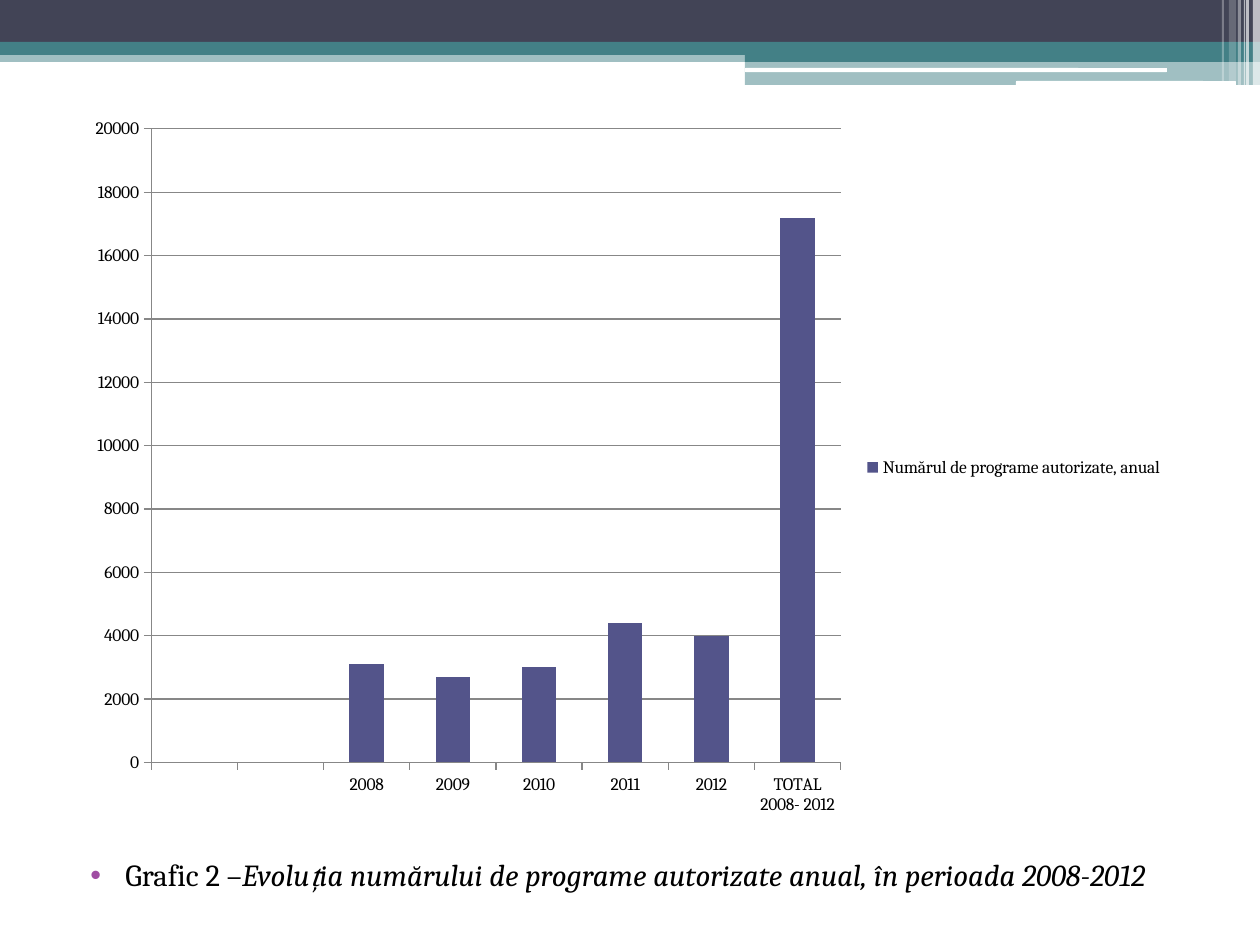
"""Build a slide with a banded header, a column chart and its caption."""
from dataclasses import dataclass

from lxml.etree import SubElement as Sub
from pptx import Presentation
from pptx.chart.data import CategoryChartData as Data
from pptx.dml.color import RGBColor as Rgb
from pptx.enum.chart import XL_CHART_TYPE as Kind
from pptx.enum.chart import XL_LEGEND_POSITION as Side
from pptx.enum.chart import XL_TICK_MARK as Tick
from pptx.enum.shapes import MSO_SHAPE as Form
from pptx.oxml import parse_xml as to_xml
from pptx.oxml.ns import nsdecls, qn
from pptx.util import Pt

SCALE = 914400 // 126


@dataclass(frozen=True)
class Theme:
    """Colours, font and type sizes of the slide."""
    white: str = "FFFFFF"
    dark: str = "424456"
    teal: str = "438086"
    bar: str = "53548A"
    grid: str = "878787"
    dot: str = "A04DA3"
    ink: str = "000000"
    font: str = "Cambria"
    body: float = 17.5
    small: float = 10


LOOK = Theme()

BANDS = [
    (0, 50, 1260, 12, LOOK.teal, 50),
    (0, 0, 1260, 43, LOOK.dark, 100),
    (0, 42, 1260, 13, LOOK.teal, 100),
    (745, 49, 515, 13, LOOK.teal, 100),
    (745, 62, 515, 23, LOOK.teal, 50),
]
PILLS = [(745, 68, 422, 4), (1016, 81, 220, 5)]
STRIPES = [
    (1253, 7, 85, 65), (1246, 3, 85, 65), (1244, 1, 85, 60),
    (1238, 3, 85, 40), (1229, 7, 81, 20), (1222, 2, 81, 30),
]
CATS = ["", "", "2008", "2009", "2010", "2011", "2012", "TOTAL 2008- 2012"]
VALS = [None, None, 3100, 2700, 3000, 4400, 4000, 17200]
FRAME = (73, 105, 1103, 725)
PLOT = (151, 129, 689, 634)


def px(*nums):
    """Turn pixels into EMU."""
    return [num * SCALE for num in nums]


def add_bar(slide, box, color, alpha=100, form=Form.RECTANGLE):
    """Add a plain filled bar with an opacity in percent."""
    bar = slide.shapes.add_shape(form, *px(*box))
    bar.shadow.inherit = False
    bar.line.fill.background()
    bar.fill.solid()
    bar.fill.fore_color.rgb = Rgb.from_string(color)
    if alpha < 100:
        tint = bar.fill._xPr.find(".//" + qn("a:srgbClr"))
        Sub(tint, qn("a:alpha"), val=str(alpha * 1000))


def add_head(slide):
    """Add the header bands, pills and stripes."""
    for *box, color, alpha in BANDS:
        add_bar(slide, box, color, alpha)
    for box in PILLS:
        add_bar(slide, box, LOOK.white, form=Form.ROUNDED_RECTANGLE)
    for left, width, height, alpha in STRIPES:
        add_bar(slide, (left, 0, width, height), LOOK.white, alpha)


def set_font(font, size):
    """Apply the theme font in the ink colour."""
    font.name = LOOK.font
    font.size = Pt(size)
    font.color.rgb = Rgb.from_string(LOOK.ink)


def set_line(line):
    """Draw a thin grey line."""
    line.color.rgb = Rgb.from_string(LOOK.grid)
    line.width = Pt(0.75)


def set_plot(chart):
    """Pin the inner plot area to its place in the frame."""
    left, top, width, height = FRAME
    spot = {
        "x": (PLOT[0] - left) / width, "y": (PLOT[1] - top) / height,
        "w": PLOT[2] / width, "h": PLOT[3] / height,
    }
    area = chart._chartSpace.chart.plotArea
    for old in area.findall(qn("c:layout")):
        area.remove(old)
    modes = "".join(f'<c:{key}Mode val="edge"/>' for key in "xy")
    sizes = "".join(f'<c:{key} val="{num:.3f}"/>' for key, num in spot.items())
    area.insert(0, to_xml(
        f'<c:layout {nsdecls("c")}><c:manualLayout>'
        f'<c:layoutTarget val="inner"/>{modes}{sizes}'
        '</c:manualLayout></c:layout>'))


def add_graph(slide):
    """Add the column chart of authorised programmes."""
    data = Data()
    data.categories = CATS
    data.add_series("Numărul de programe autorizate, anual", VALS)
    chart = slide.shapes.add_chart(
        Kind.COLUMN_CLUSTERED, *px(*FRAME), data).chart
    set_font(chart.font, LOOK.small)
    chart.has_title = False
    chart.has_legend = True
    chart.legend.position = Side.RIGHT
    chart.legend.include_in_layout = False
    plot = chart.plots[0]
    plot.gap_width = 150
    plot.vary_by_categories = False
    fill = plot.series[0].format.fill
    fill.solid()
    fill.fore_color.rgb = Rgb.from_string(LOOK.bar)
    for axis in (chart.category_axis, chart.value_axis):
        axis.major_tick_mark = Tick.OUTSIDE
        axis.minor_tick_mark = Tick.NONE
        set_line(axis.format.line)
    axis = chart.value_axis
    axis.minimum_scale, axis.maximum_scale = 0, 20000
    axis.major_unit = 2000
    axis.has_major_gridlines = True
    set_line(axis.major_gridlines.format.line)
    set_plot(chart)


def add_note(slide):
    """Add the bulleted caption below the chart."""
    frame = slide.shapes.add_textbox(*px(63, 850, 1134, 77)).text_frame
    frame.word_wrap = True
    para = frame.paragraphs[0]
    para.space_before = Pt(3)
    props = para._p.get_or_add_pPr()
    left, hang = px(50, -35)
    props.set("marL", str(left))
    props.set("indent", str(hang))
    Sub(Sub(props, qn("a:buClr")), qn("a:srgbClr"), val=LOOK.dot)
    Sub(props, qn("a:buFont"), typeface="Arial")
    Sub(props, qn("a:buChar"), char="•")
    parts = [
        ("Grafic 2 –", False),
        ("Evoluția numărului de programe autorizate anual, "
         "în perioada 2008-2012", True),
    ]
    for text, slant in parts:
        run = para.add_run()
        run.text = text
        set_font(run.font, LOOK.body)
        run.font.italic = slant


def main():
    """Build and save the slide."""
    deck = Presentation()
    deck.slide_width, deck.slide_height = px(1260, 945)
    slide = deck.slides.add_slide(deck.slide_layouts[6])
    add_head(slide)
    add_graph(slide)
    add_note(slide)
    deck.save("out.pptx")


if __name__ == "__main__":
    main()
